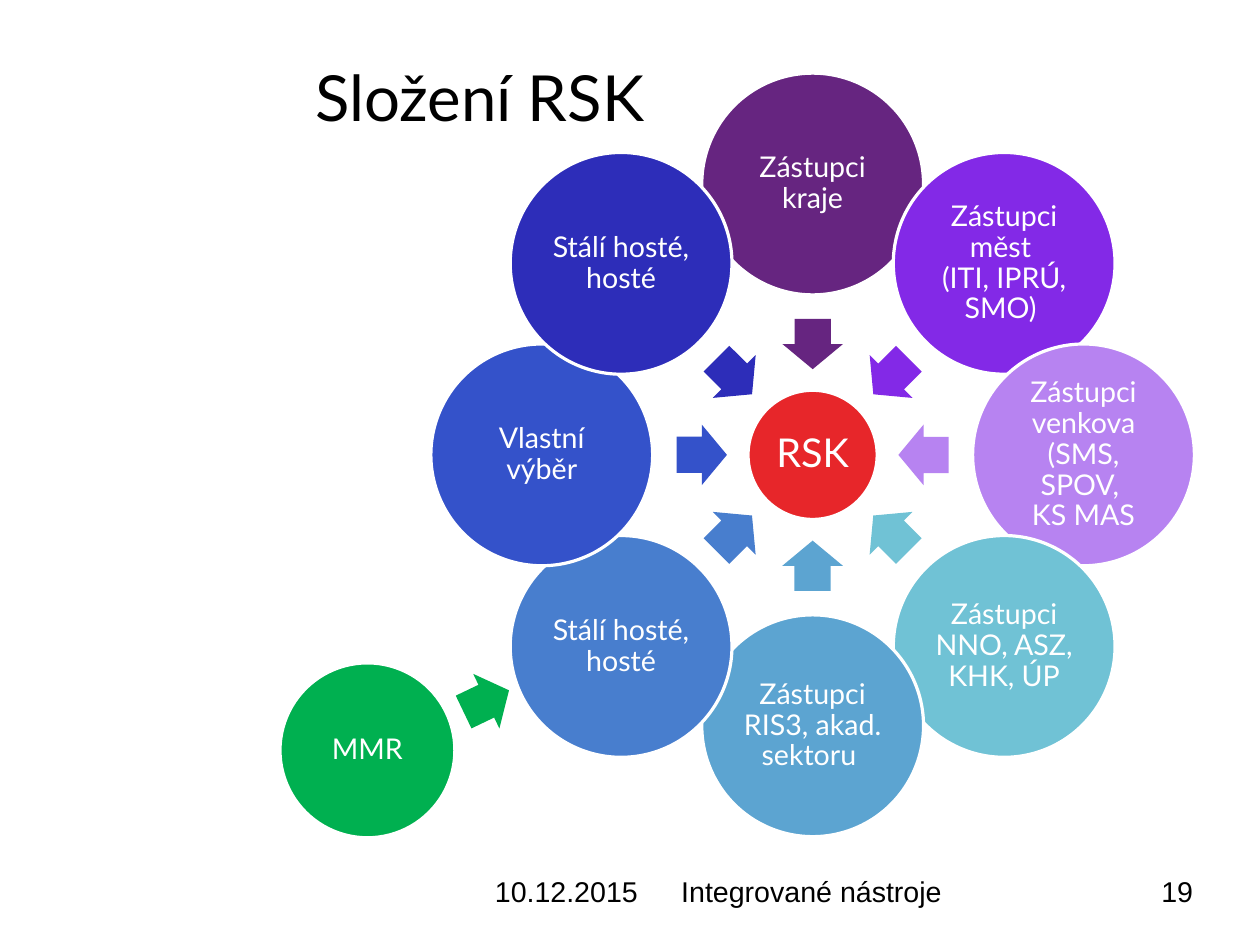
from dataclasses import dataclass
from math import cos, radians, sin

from pptx import Presentation
from pptx.dml.color import RGBColor
from pptx.enum.shapes import MSO_SHAPE
from pptx.enum.text import MSO_ANCHOR, PP_ALIGN
from pptx.util import Inches, Pt

ELLIPSE = MSO_SHAPE.OVAL
ARROW = MSO_SHAPE.RIGHT_ARROW
LEFT, CENTER = PP_ALIGN.LEFT, PP_ALIGN.CENTER
TOP, MIDDLE = MSO_ANCHOR.TOP, MSO_ANCHOR.MIDDLE
CM_PER_INCH = 2.54


@dataclass(frozen=True)
class Theme:
    black: str = "000000"
    white: str = "FFFFFF"
    core: str = "E7262A"
    ministry: str = "00B050"
    heading_font: str = "Lato"
    footer_font: str = "Arial"
    title_size: int = 40
    core_size: int = 25
    body_size: int = 18
    outline: int = 2


THEME = Theme()

MEMBERS = [
    ("Zástupci kraje", "662580"),
    ("Zástupci měst \n(ITI, IPRÚ, SMO) ", "8329E7"),
    ("Zástupci venkova\n(SMS, SPOV, \nKS MAS", "B783F1"),
    ("Zástupci NNO, ASZ, KHK, ÚP", "70C2D5"),
    ("Zástupci RIS3, akad. sektoru ", "5CA4D1"),
    ("Stálí hosté, hosté", "487ECE"),
    ("Vlastní výběr", "3452CA"),
    ("Stálí hosté, hosté", "2D2DB9"),
]


def write_text(frame, text, *, size=THEME.body_size, font=THEME.heading_font,
               color=THEME.black, align=LEFT, anchor=TOP, spacing=1.0, inset=0):
    frame.word_wrap = True
    frame.vertical_anchor = anchor
    frame.margin_left = frame.margin_right = Inches(inset)
    frame.margin_top = frame.margin_bottom = Inches(inset)
    line = frame.paragraphs[0]
    line.text = text
    line.alignment = align
    line.line_spacing = spacing
    line.font.size = Pt(size)
    line.font.name = font
    line.font.color.rgb = RGBColor.from_string(color)


def add_label(slide, box, text, **style):
    label = slide.shapes.add_textbox(*map(Inches, box))
    write_text(label.text_frame, text, **style)


def add_centered(slide, kind, center, width, height, color):
    x, y = center
    shape = slide.shapes.add_shape(
        kind, Inches(x - width / 2), Inches(y - height / 2),
        Inches(width), Inches(height))
    shape.shadow.inherit = False
    shape.fill.solid()
    shape.fill.fore_color.rgb = RGBColor.from_string(color)
    shape.line.fill.background()
    return shape


def add_circle(slide, center, diameter, color, text, size=THEME.body_size):
    circle = add_centered(slide, ELLIPSE, center, diameter, diameter, color)
    circle.line.color.rgb = RGBColor.from_string(THEME.white)
    circle.line.width = Pt(THEME.outline)
    write_text(circle.text_frame, text, size=size, color=THEME.white,
               align=CENTER, anchor=MIDDLE, spacing=0.9, inset=0.03)


def add_arrow(slide, center, rotation, color):
    arrow = add_centered(slide, ARROW, center, 0.44, 0.53, color)
    arrow.adjustments[0] = 0.6
    arrow.adjustments[1] = 0.5
    arrow.rotation = rotation


def add_member_wheel(slide, box):
    left, top, side = box
    middle = (left + side / 2, top + side / 2)
    diameter = 1.94
    orbit = (side - diameter) / 2
    arrow_orbit = 0.97

    def around(distance, angle):
        turn = radians(angle)
        return middle[0] + distance * cos(turn), middle[1] + distance * sin(turn)

    add_circle(slide, middle, 1.13, THEME.core, "RSK", THEME.core_size)
    for index, (member, color) in enumerate(MEMBERS):
        angle = index * 360 / len(MEMBERS) - 90
        add_arrow(slide, around(arrow_orbit, angle), (angle + 180) % 360, color)
        add_circle(slide, around(orbit, angle), diameter, color, member)


def add_ministry(slide, box):
    left, top, diameter = box
    center = (left + diameter / 2, top + diameter / 2)
    add_circle(slide, center, diameter, THEME.ministry, "MMR")
    add_arrow(slide, (center[0] + 1.04, center[1] - 0.43), 334.4, THEME.ministry)


def add_footer(slide, box):
    left, top, height = box
    for offset, width, text in [(0, 2.56, "10.12.2015"),
                                (1.63, 3.48, "Integrované nástroje"),
                                (5.83, 0.82, "19")]:
        add_label(slide, (left + offset, top, width, height), text,
                  font=THEME.footer_font)


def main():
    deck = Presentation()
    deck.slide_width = Inches(28 / CM_PER_INCH)
    deck.slide_height = Inches(21 / CM_PER_INCH)
    slide = deck.slides.add_slide(deck.slide_layouts[6])
    add_label(slide, (2.76, 0.26, 8.06, 1.24), "Složení RSK",
              size=THEME.title_size, anchor=MIDDLE, spacing=0.93)
    add_member_wheel(slide, (3.77, 0.64, 6.68))
    add_ministry(slide, (2.45, 5.8, 1.53))
    add_footer(slide, (4.33, 7.65, 0.56))
    deck.save("out.pptx")


if __name__ == "__main__":
    main()
